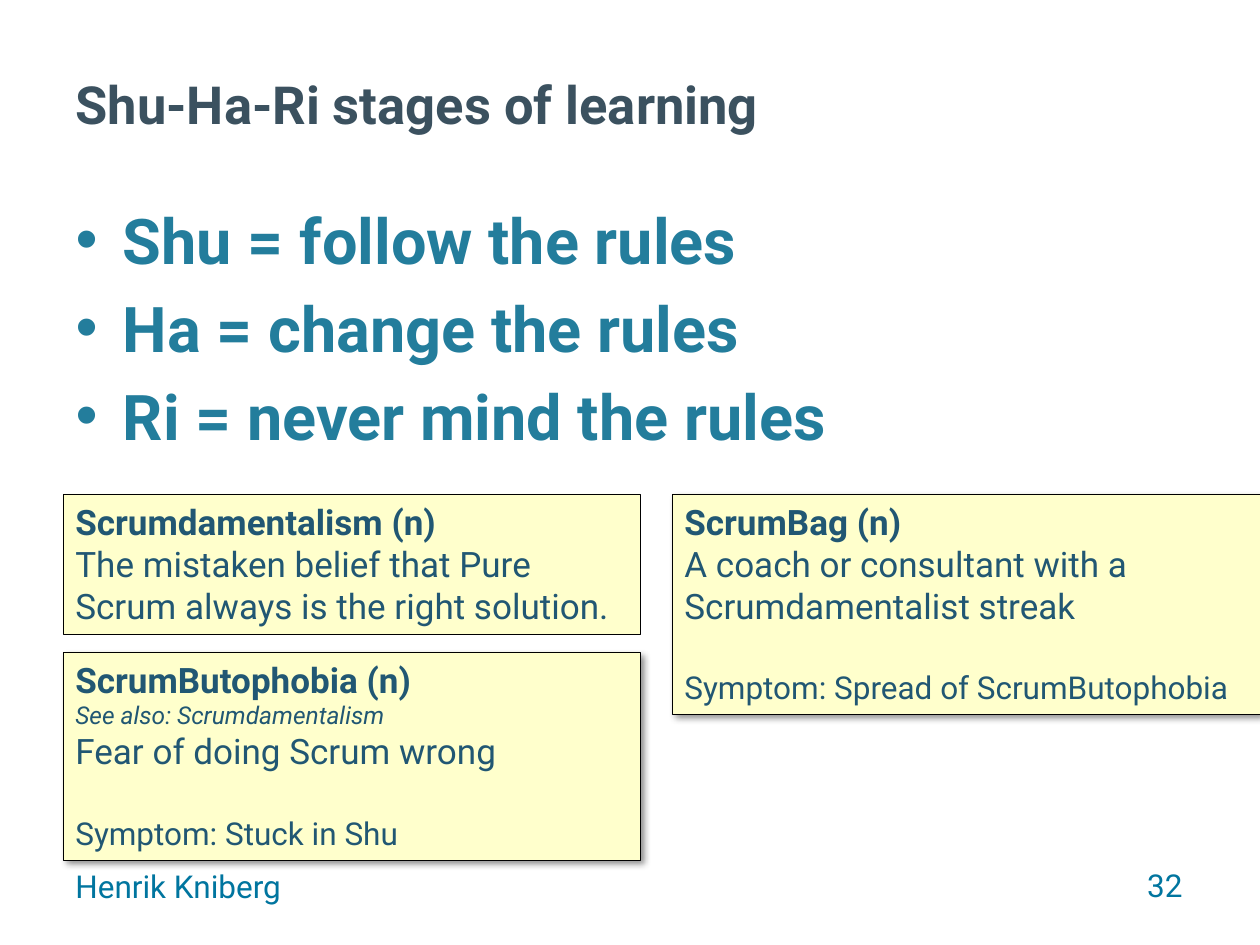
"""Build the slide on the Shu-Ha-Ri stages of learning."""
from lxml import etree
from pptx import Presentation, util as u
from pptx.dml.color import RGBColor
from pptx.enum import shapes, text
from pptx.oxml import ns

PX = u.Inches(1) / 126
COLORS = {"title": "3B515F", "stages": "237D9C", "footer": "00759F",
          "definition": "215773", "note": "FFFFCC", "black": "000000"}
TERM = {"size": u.Pt(20), "bold": True}
MEANING = {"size": u.Pt(20), "bold": False}
SEE_ALSO = {"size": u.Pt(14), "bold": False, "italic": True}
SYMPTOM = {"size": u.Pt(18), "bold": False}


def px(*lengths):
    return [round(length * PX) for length in lengths]


def write(frame, lines, color, align=text.PP_ALIGN.LEFT):
    frame.auto_size = text.MSO_AUTO_SIZE.NONE
    frame.word_wrap = True
    frame.vertical_anchor = text.MSO_ANCHOR.TOP
    for index, (words, style, gap) in enumerate(lines):
        paragraph = frame.add_paragraph() if index else frame.paragraphs[0]
        paragraph.alignment = align
        paragraph.space_before = u.Pt(gap)
        run = paragraph.add_run()
        run.text = words
        run.font.color.rgb = RGBColor.from_string(COLORS[color])
        for key, value in {"name": "Roboto", **style}.items():
            setattr(run.font, key, value)


deck = Presentation()
deck.slide_width, deck.slide_height = px(1260, 945)
slide = deck.slides.add_slide(deck.slide_layouts[1])

title, stages = slide.placeholders
title.left, title.top, title.width, title.height = px(63, 66, 1134, 89)
write(title.text_frame,
      [("Shu-Ha-Ri stages of learning", {"size": u.Pt(30), "bold": True}, 0)], "title")

stages.left, stages.top, stages.width, stages.height = px(63, 195, 1134, 576)
stage_style = {"size": u.Pt(36), "bold": True}
write(stages.text_frame, [
    ("Shu = follow the rules", stage_style, 0),
    ("Ha = change the rules", stage_style, 7),
    ("Ri = never mind the rules", stage_style, 7),
], "stages")

footers = [
    ("Henrik Kniberg", (63, 861, 399, 66), text.PP_ALIGN.LEFT),
    ("32", (901, 860, 294, 66), text.PP_ALIGN.RIGHT),
]
for words, place, align in footers:
    footer = slide.shapes.add_textbox(*px(*place))
    write(footer.text_frame, [(words, {"size": u.Pt(18)}, 0)], "footer", align)

definitions = [
    ((63, 652, 577, 208), True, [
        ("ScrumButophobia (n)", TERM, 0),
        ("See also: Scrumdamentalism", SEE_ALSO, 0),
        ("Fear of doing Scrum wrong", MEANING, 0),
        ("Symptom: Stuck in Shu", SYMPTOM, 24),
    ]),
    ((672, 494, 588, 220), True, [
        ("ScrumBag (n)", TERM, 0),
        ("A coach or consultant with a Scrumdamentalist streak", MEANING, 0),
        ("Symptom: Spread of ScrumButophobia", SYMPTOM, 24),
    ]),
    ((63, 494, 577, 140), False, [
        ("Scrumdamentalism (n)", TERM, 0),
        ("The mistaken belief that Pure Scrum always is the right solution.", MEANING, 0),
    ]),
]
for place, shaded, lines in definitions:
    note = slide.shapes.add_shape(shapes.MSO_SHAPE.RECTANGLE, *px(*place))
    note.fill.solid()
    note.fill.fore_color.rgb = RGBColor.from_string(COLORS["note"])
    note.line.color.rgb = RGBColor.from_string(COLORS["black"])
    note.line.width = u.Pt(0.25)
    note.shadow.inherit = False
    if shaded:
        effects = note.element.spPr.find(ns.qn("a:effectLst"))
        shadow = etree.SubElement(effects, ns.qn("a:outerShdw"), blurRad=str(u.Pt(4)),
                                  dist=str(u.Pt(3)), dir=str(45 * 60000),
                                  algn="tl", rotWithShape="0")
        tint = etree.SubElement(shadow, ns.qn("a:srgbClr"), val=COLORS["black"])
        etree.SubElement(tint, ns.qn("a:alpha"), val="43000")
    write(note.text_frame, lines, "definition")

deck.save("out.pptx")
